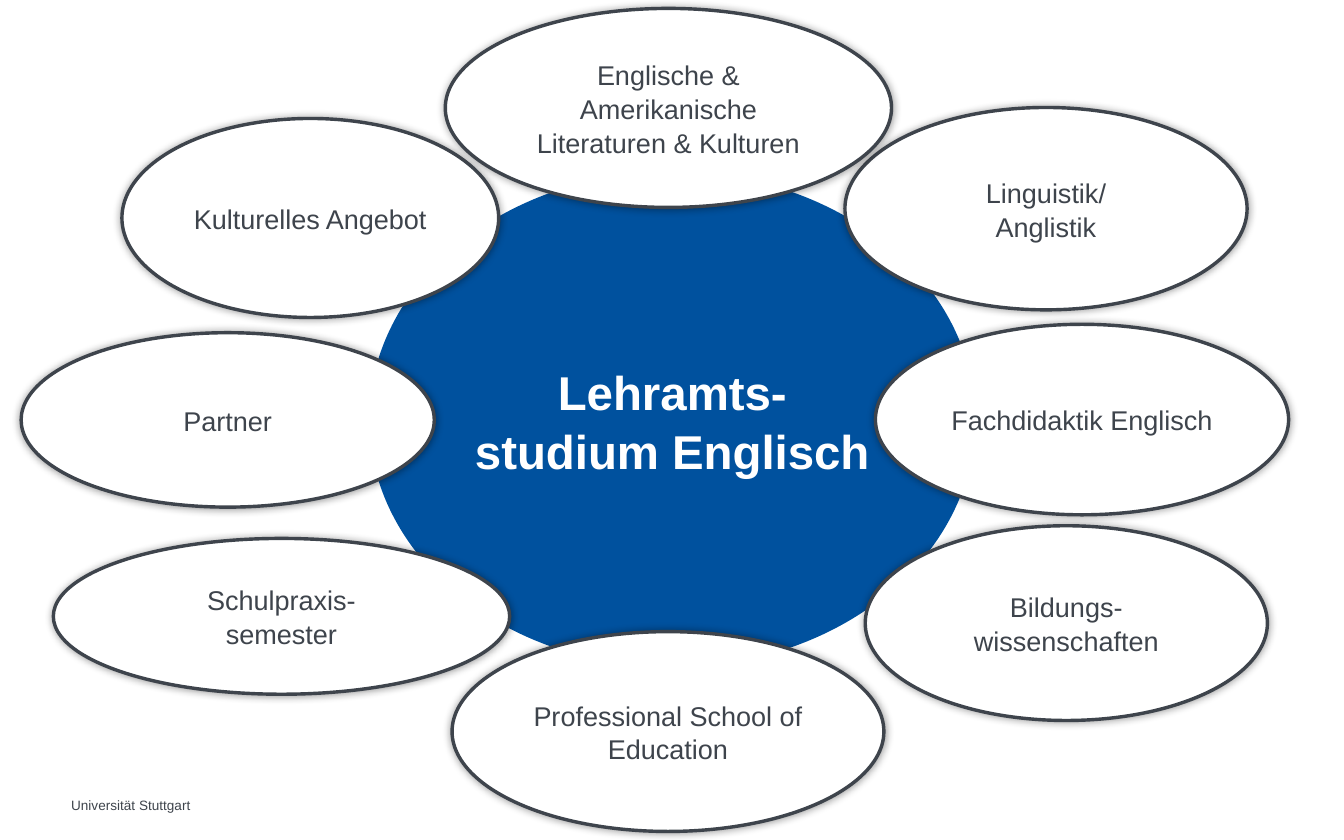
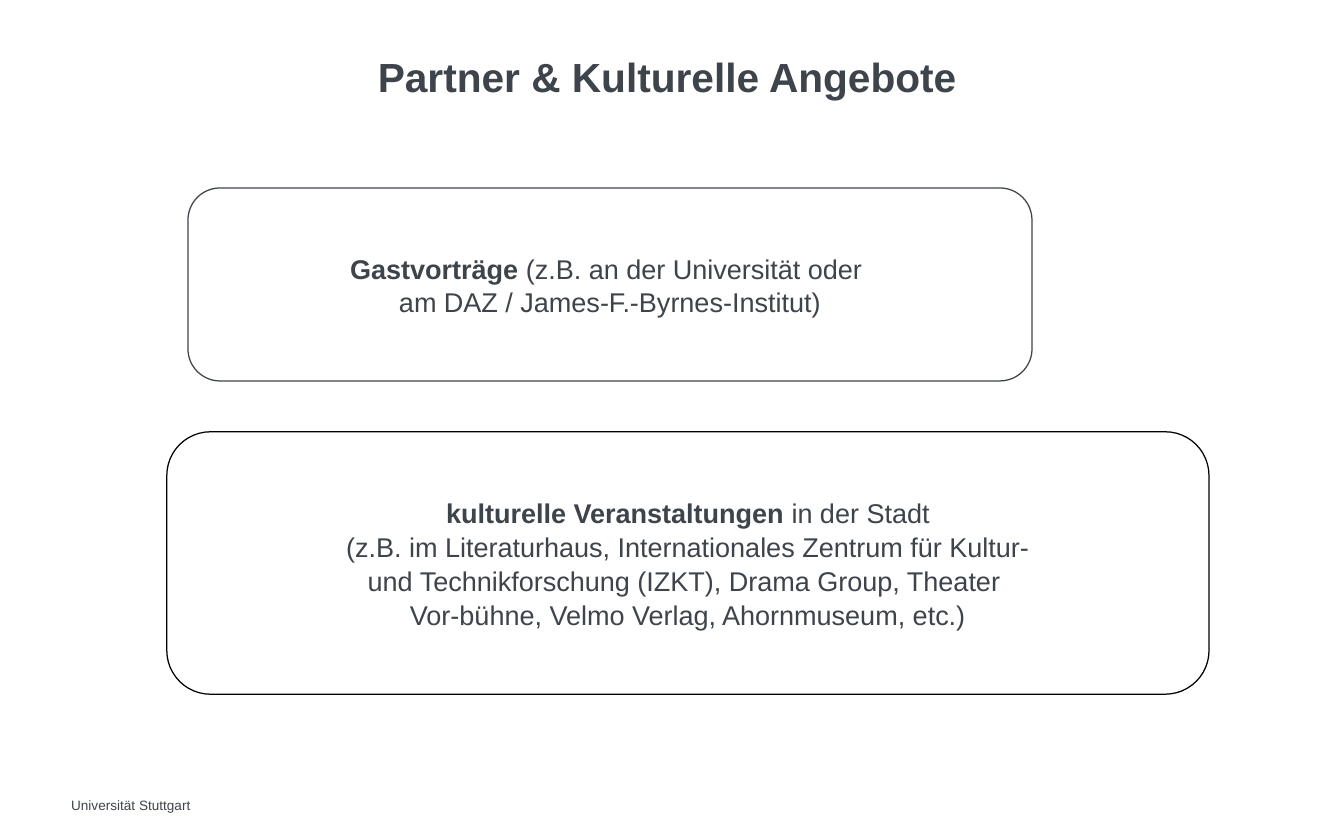
"""Builds two slides on the English teaching degree and its cultural partners."""
from dataclasses import dataclass

from lxml.etree import SubElement
from pptx import Presentation
from pptx.dml.color import RGBColor
from pptx.enum.shapes import MSO_SHAPE as Shape
from pptx.enum.text import MSO_ANCHOR as Anchor, PP_ALIGN as Align
from pptx.oxml.ns import qn
from pptx.util import Pt


@dataclass(frozen=True)
class Theme:
    font: str = "Arial"
    ink: str = "3E444C"
    blue: str = "00519E"
    white: str = "FFFFFF"
    black: str = "000000"
    hub_size: int = 28
    title_size: int = 24
    body_size: int = 16
    footer_size: int = 8
    line_spacing: float = 1.04


theme = Theme()


def write(shape, paragraphs, size, color, align=Align.CENTER, wrap=True):
    frame = shape.text_frame
    frame.word_wrap = wrap
    for index, runs in enumerate(paragraphs):
        paragraph = frame.paragraphs[0] if index == 0 else frame.add_paragraph()
        paragraph.alignment = align
        paragraph.line_spacing = theme.line_spacing
        for text, bold in runs:
            run = paragraph.add_run()
            run.text = text
            run.font.name = theme.font
            run.font.size = Pt(size)
            run.font.bold = bold
            run.font.color.rgb = RGBColor.from_string(color)


def add_panel(slide, kind, box, fill, line=None, width=0.75):
    shape = slide.shapes.add_shape(kind, *map(Pt, box))
    shape.shadow.inherit = False
    shape.fill.solid()
    shape.fill.fore_color.rgb = RGBColor.from_string(fill)
    if line:
        shape.line.color.rgb = RGBColor.from_string(line)
        shape.line.width = Pt(width)
    else:
        shape.line.fill.background()
    shape.text_frame.vertical_anchor = Anchor.MIDDLE
    return shape


presentation = Presentation()
presentation.slide_width = Pt(793.7)
presentation.slide_height = Pt(496.06)
blank = presentation.slide_layouts[6]
overview = presentation.slides.add_slide(blank)
partners = presentation.slides.add_slide(blank)

for slide in (overview, partners):
    footer = slide.shapes.add_textbox(Pt(42), Pt(470), Pt(525), Pt(11))
    frame = footer.text_frame
    frame.margin_left = frame.margin_top = frame.margin_right = frame.margin_bottom = 0
    write(footer, [[("Universität Stuttgart", False)]], theme.footer_size, theme.ink, Align.LEFT)

hub = add_panel(overview, Shape.OVAL, (218, 101.5, 358, 292.5), theme.blue)
write(hub, [[("Lehramts-studium Englisch", True)]], theme.hub_size, theme.white)

topics = [
    ((267, 373, 255, 118), ["Professional School of Education"]),
    ((499, 63.5, 237.5, 119.5), ["Linguistik/", "Anglistik"]),
    ((72, 70, 222.5, 117.5), ["Kulturelles Angebot"]),
    ((31.5, 318, 269.5, 92), ["Schulpraxis-", "semester"]),
    ((511, 310.5, 237.5, 115), ["Bildungs-wissenschaften"]),
    ((12.5, 196.5, 244, 103), ["Partner"]),
    ((263, 5, 263.5, 117.5), ["Englische & Amerikanische Literaturen & Kulturen"]),
    ((517, 191.5, 244, 112.5), ["Fachdidaktik Englisch"]),
]
for box, lines in topics:
    topic = add_panel(overview, Shape.OVAL, box, theme.white, theme.ink, 2)
    effects = topic._element.spPr.find(qn("a:effectLst"))
    shadow = SubElement(effects, qn("a:outerShdw"), blurRad=str(Pt(5)), dist="0", rotWithShape="0")
    shade = SubElement(shadow, qn("a:srgbClr"), val=theme.black)
    SubElement(shade, qn("a:alpha"), val="40000")
    write(topic, [[(line, False)] for line in lines], theme.body_size, theme.ink)

title = add_panel(partners, Shape.RECTANGLE, (42, 28, 704, 33), theme.white)
write(title, [[("Partner & Kulturelle Angebote", True)]], theme.title_size, theme.ink, wrap=False)

offers = [
    ((98.5, 255, 615.5, 155), theme.black, [
        [("kulturelle Veranstaltungen ", True), ("in der Stadt", False)],
        [("(z.B. im Literaturhaus, Internationales Zentrum für Kultur-", False)],
        [("und Technikforschung (IZKT), Drama Group, Theater ", False)],
        [("Vor-bühne, Velmo Verlag, Ahornmuseum, etc.)", False)],
    ]),
    ((111, 111, 498.5, 114), theme.ink, [
        [("Gastvorträge", True), (" (z.B. an der Universität oder ", False)],
        [("am DAZ / James-F.-Byrnes-Institut)", False)],
    ]),
]
for box, line, paragraphs in offers:
    offer = add_panel(partners, Shape.ROUNDED_RECTANGLE, box, theme.white, line)
    write(offer, paragraphs, theme.body_size, theme.ink, wrap=False)

presentation.save("out.pptx")
